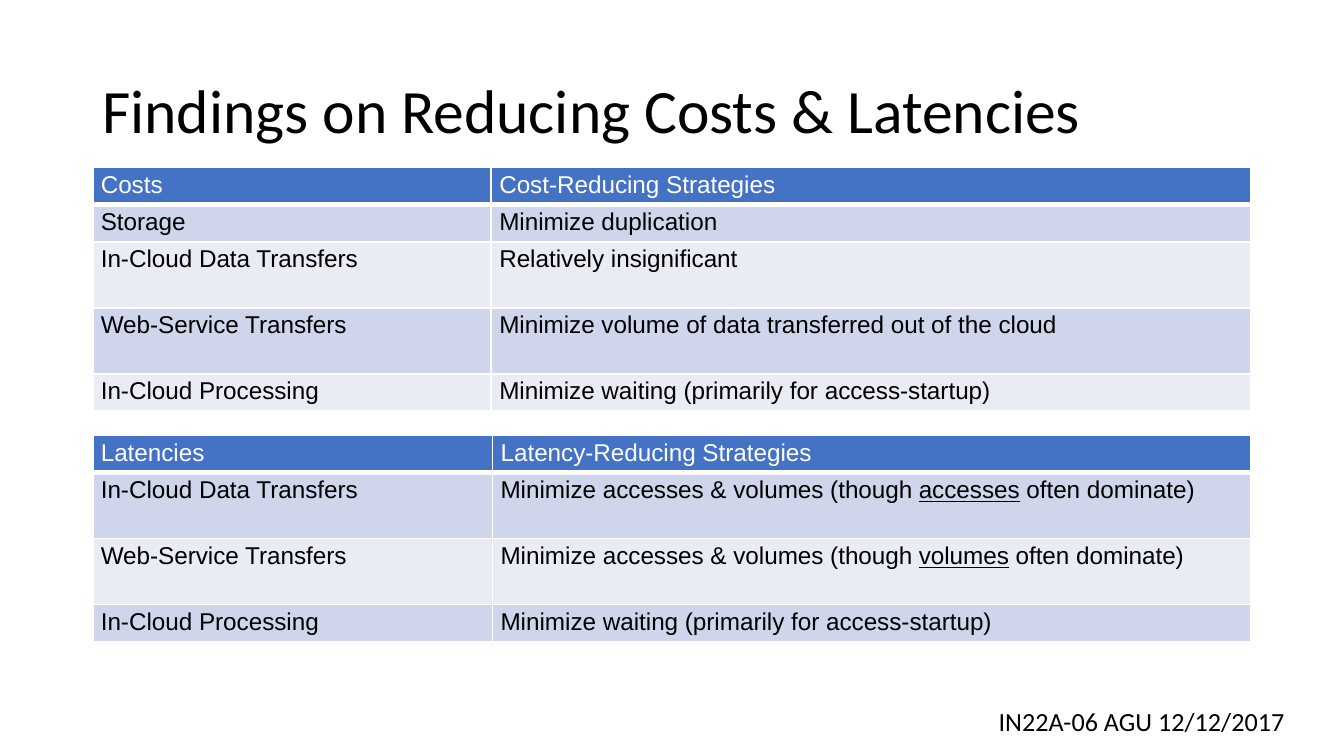
from dataclasses import dataclass
from lxml.etree import SubElement
from pptx import Presentation
from pptx.dml.color import RGBColor as Rgb
from pptx.enum.text import MSO_ANCHOR as Anchor, PP_ALIGN as Align
from pptx.oxml.ns import qn
from pptx.util import Inches, Pt


@dataclass(frozen=True)
class Theme:
    ink: str = "000000"
    paper: str = "FFFFFF"
    header: str = "4472C4"
    bands: tuple = ("CFD5EA", "E9EBF5")
    heading_font: str = "Calibri"
    table_font: str = "Arial"
    title_size: int = 33
    table_size: int = 13
    footer_size: int = 14
    rule: int = 1
    header_rule: int = 3


def write(frame, text, font, size, color, align=Align.LEFT, anchor=Anchor.TOP,
          spacing=None, inset=(0.07, 0.04)):
    frame.word_wrap = True
    frame.vertical_anchor = anchor
    frame.margin_left = frame.margin_right = Inches(inset[0])
    frame.margin_top = frame.margin_bottom = Inches(inset[1])
    para = frame.paragraphs[0]
    para.alignment = align
    para.line_spacing = spacing
    for index, part in enumerate(text.split("_")):
        span = para.add_run()
        span.text = part
        span.font.name = font
        span.font.size = Pt(size)
        span.font.bold = False
        span.font.underline = index % 2 == 1
        span.font.color.rgb = Rgb.from_string(color)


class SlideBuilder:
    columns, rows = 100, 56.25

    def __init__(self, deck, theme):
        self.theme = theme
        self.unit_x = deck.slide_width / self.columns
        self.unit_y = deck.slide_height / self.rows
        self.slide = deck.slides.add_slide(deck.slide_layouts[5])

    def place(self, left, top, width, height):
        return (round(left * self.unit_x), round(top * self.unit_y),
                round(width * self.unit_x), round(height * self.unit_y))

    def title(self, text, *area):
        box = self.slide.shapes.title
        box.left, box.top, box.width, box.height = self.place(*area)
        write(box.text_frame, text, self.theme.heading_font,
              self.theme.title_size, self.theme.ink, anchor=Anchor.MIDDLE,
              spacing=0.9, inset=(0.07, 0.07))

    def footer(self, text, *area):
        box = self.slide.shapes.add_textbox(*self.place(*area))
        write(box.text_frame, text, self.theme.heading_font,
              self.theme.footer_size, self.theme.ink, align=Align.RIGHT)

    def header_borders(self, cell):
        properties = cell._tc.get_or_add_tcPr()
        rule = self.theme.rule
        for side, width in zip("LRTB", (rule, rule, rule, self.theme.header_rule)):
            line = SubElement(properties, qn(f"a:ln{side}"), w=str(Pt(width)))
            fill = SubElement(line, qn("a:solidFill"))
            SubElement(fill, qn("a:srgbClr"), val=self.theme.paper)

    def table(self, records, left, top, widths, heights):
        theme = self.theme
        area = self.place(left, top, sum(widths), sum(heights))
        table = self.slide.shapes.add_table(len(records), len(widths), *area).table
        for column, width in zip(table.columns, widths):
            column.width = round(width * self.unit_x)
        for index, (row, record, height) in enumerate(zip(table.rows, records, heights)):
            row.height = round(height * self.unit_y)
            is_header = index == 0
            color = theme.paper if is_header else theme.ink
            shade = theme.header if is_header else theme.bands[(index - 1) % 2]
            for cell, text in zip(row.cells, record):
                if is_header:
                    self.header_borders(cell)
                cell.fill.solid()
                cell.fill.fore_color.rgb = Rgb.from_string(shade)
                write(cell.text_frame, text, theme.table_font, theme.table_size, color)
                cell.margin_left = cell.margin_right = Inches(0.06)
                cell.margin_top = cell.margin_bottom = Inches(0.03)


def main():
    deck = Presentation()
    deck.slide_width = Inches(10)
    deck.slide_height = deck.slide_width * 9 // 16
    page = SlideBuilder(deck, Theme())
    left, short, tall = 6.9, 2.75, 4.91
    processing = ("In-Cloud Processing", "Minimize waiting (primarily for access-startup)")
    dominant = "Minimize accesses & volumes (though _{}_ often dominate)"

    page.footer("IN22A-06 AGU 12/12/2017", 71, 52.1, 25.3, 3)
    page.title("Findings on Reducing Costs & Latencies", left, 3, 86.2, 10.9)
    page.table([
        ("Costs", "Cost-Reducing Strategies"),
        ("Storage", "Minimize duplication"),
        ("In-Cloud Data Transfers", "Relatively insignificant"),
        ("Web-Service Transfers", "Minimize volume of data transferred out of the cloud"),
        processing,
    ], left, 12.45, (29.65, 56.55), (short, short, tall, tall, short))
    page.table([
        ("Latencies", "Latency-Reducing Strategies"),
        ("In-Cloud Data Transfers", dominant.format("accesses")),
        ("Web-Service Transfers", dominant.format("volumes")),
        processing,
    ], left, 32.4, (29.75, 56.45), (short, tall, tall, short))
    deck.save("out.pptx")


if __name__ == "__main__":
    main()
